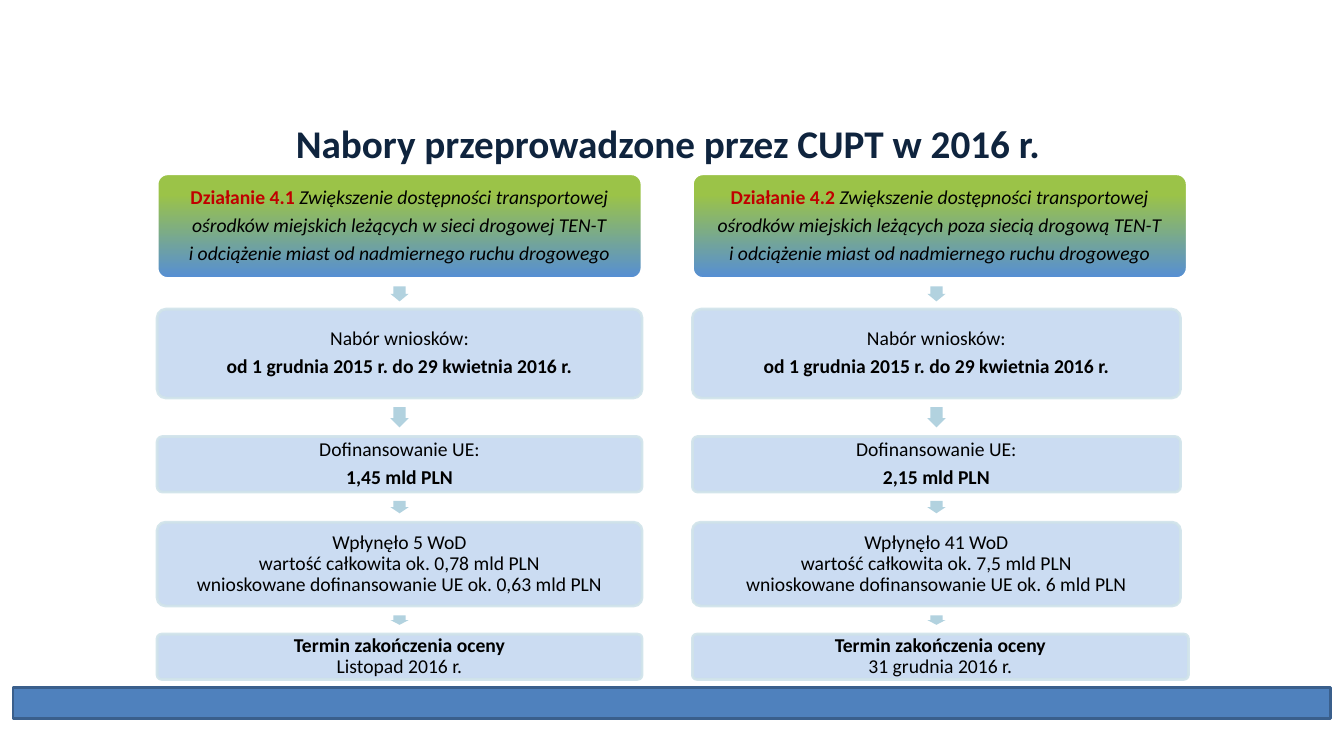
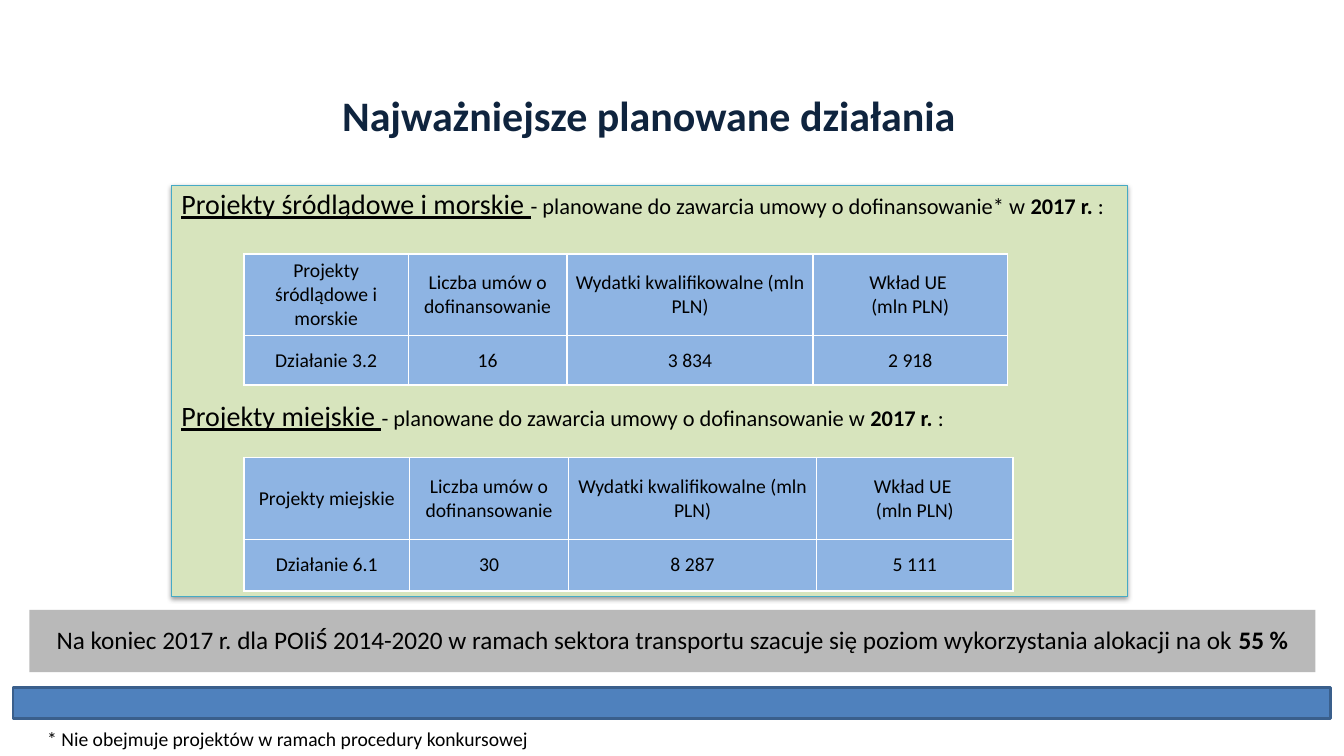
from lxml import etree
from pptx import Presentation
from pptx.dml.color import RGBColor
from pptx.enum.shapes import MSO_SHAPE
from pptx.enum.text import MSO_ANCHOR, PP_ALIGN
from pptx.oxml import parse_xml
from pptx.oxml.ns import nsdecls, qn
from pptx.util import Cm, Pt

RECTANGLE, ROUNDED = MSO_SHAPE.RECTANGLE, MSO_SHAPE.ROUNDED_RECTANGLE
PROCESS, DOWN_ARROW = MSO_SHAPE.FLOWCHART_PROCESS, MSO_SHAPE.DOWN_ARROW
TOP, MIDDLE = MSO_ANCHOR.TOP, MSO_ANCHOR.MIDDLE
LEFT, CENTER = PP_ALIGN.LEFT, PP_ALIGN.CENTER

FONT = "Calibri"
BLACK = RGBColor(0x00, 0x00, 0x00)
WHITE = RGBColor(0xFF, 0xFF, 0xFF)
NAVY = RGBColor(0x0F, 0x24, 0x3E)
RED = RGBColor(0xC0, 0x00, 0x00)
BAND = RGBColor(0x4F, 0x81, 0xBD)
BAND_EDGE = RGBColor(0x3A, 0x5F, 0x8C)
HEADER_BLUE = RGBColor(0x55, 0x8E, 0xD5)
HEADER_GREEN = RGBColor(0x9B, 0xC3, 0x48)
CARD = RGBColor(0xC6, 0xD9, 0xF1)
CARD_EDGE = RGBColor(0xD0, 0xE3, 0xEA)
ARROW = RGBColor(0xB2, 0xD2, 0xDF)
PANEL = RGBColor(0xD7, 0xE4, 0xBD)
PANEL_EDGE = RGBColor(0x46, 0xAA, 0xC5)
CELL = RGBColor(0x8E, 0xB4, 0xE3)
GREY = RGBColor(0xA6, 0xA6, 0xA6)


def add_box(page, kind, place, fill, edge=None, edge_width=2, opacity=100):
    """Add a shadowless shape; place is left, top, width, height in cm."""
    box = page.shapes.add_shape(kind, *[Cm(length) for length in place])
    box.shadow.inherit = False
    box.fill.solid()
    box.fill.fore_color.rgb = fill
    if edge is None:
        box.line.fill.background()
    else:
        box.line.color.rgb = edge
        box.line.width = Pt(edge_width)
    if opacity < 100:
        for color in box._element.spPr.iter(qn("a:srgbClr")):
            etree.SubElement(color, qn("a:alpha")).set("val", str(opacity * 1000))
    return box


def write(frame, lines, size=14, align=CENTER, color=BLACK, spacing=1.0, after=0):
    """Each line is a list of (text, font settings) pairs."""
    frame.word_wrap = True
    for number, line in enumerate(lines):
        para = frame.add_paragraph() if number else frame.paragraphs[0]
        para.alignment = align
        para.line_spacing = spacing
        para.space_after = Pt(after)
        for text, settings in line:
            span = para.add_run()
            span.text = text
            font = span.font
            font.name = FONT
            font.size = Pt(settings.get("size", size))
            font.bold = settings.get("bold", False)
            font.italic = settings.get("italic", False)
            font.underline = settings.get("underline", False)
            font.color.rgb = settings.get("color", color)


PLAIN, BOLD, ITALIC = {}, {"bold": True}, {"italic": True}

deck = Presentation()
deck.slide_width, deck.slide_height = Cm(33.87), Cm(19.05)

# Title and bottom band of both slides
pages = []
for title_text, size, place in [
    ("Nabory przeprowadzone przez CUPT w 2016 r. ", 28, (5.51, 2.87, 22.86, 1.73)),
    ("Najważniejsze planowane działania", 30, (4.93, 2.13, 22.86, 2.31)),
]:
    page = deck.slides.add_slide(deck.slide_layouts[5])
    title = page.shapes.title
    title.left, title.top, title.width, title.height = [Cm(length) for length in place]
    title.text_frame.vertical_anchor = TOP
    write(title.text_frame, [[(title_text, BOLD)]], size, color=NAVY)
    add_box(page, PROCESS, (0.33, 17.32, 33.2, 0.79), BAND, BAND_EDGE)
    pages.append(page)
calls_page, plans_page = pages

# Slide 1: two columns of steps; rows are top, height, space after
rows = [(4.38, 2.64, 5), (7.79, 2.24, 5), (11, 1.4, 5), (13.16, 2.11, 0), (15.98, 1.14, 0)]
arrow_heights = [0.38, 0.51, 0.31, 0.24]
arrow_width = 0.46
columns = [
    (3.96, [12.22] * 5, "4.1", "leżących w sieci drogowej TEN-T",
     "1,45", "5", "0,78", "0,63", "Listopad 2016 r."),
    (17.45, [12.47, 12.3, 12.3, 12.3, 12.5], "4.2", "leżących poza siecią drogową TEN-T",
     "2,15", "41", "7,5", "6", "31 grudnia 2016 r."),
]
for left, widths, measure, place_text, funding, count, total, requested, deadline in columns:
    steps = [
        [[(f"Działanie {measure} ", {"bold": True, "color": RED}),
          ("Zwiększenie dostępności transportowej", ITALIC)],
         [(f"ośrodków miejskich {place_text}", ITALIC)],
         [("i odciążenie miast od nadmiernego ruchu drogowego", ITALIC)]],
        [[("Nabór wniosków:", PLAIN)],
         [("od 1 grudnia 2015 r. do 29 kwietnia 2016 r.", BOLD)]],
        [[("Dofinansowanie UE:", PLAIN)],
         [(f"{funding} mld PLN", BOLD)]],
        [[(f"Wpłynęło {count} WoD", PLAIN)],
         [(f"wartość całkowita ok. {total} mld PLN", PLAIN)],
         [(f"wnioskowane dofinansowanie UE ok. {requested} mld PLN", PLAIN)]],
        [[("Termin zakończenia oceny", BOLD)],
         [(deadline, PLAIN)]],
    ]
    for number, (lines, width, (top, height, after)) in enumerate(zip(steps, widths, rows)):
        place = (left, top, width, height)
        if number == 0:
            box = add_box(calls_page, ROUNDED, place, HEADER_GREEN, WHITE)
            box.fill.gradient()
            box.fill.gradient_angle = 90
            bottom_stop, top_stop = box.fill.gradient_stops
            bottom_stop.color.rgb, bottom_stop.position = HEADER_BLUE, 0
            top_stop.color.rgb, top_stop.position = HEADER_GREEN, 0.8
        else:
            box = add_box(calls_page, ROUNDED, place, CARD, CARD_EDGE, opacity=90)
            # Arrow centred in the gap above the card
            previous_top, previous_height, _ = rows[number - 1]
            middle = (previous_top + previous_height + top) / 2
            arrow_height = arrow_heights[number - 1]
            arrow = add_box(calls_page, DOWN_ARROW, (
                left + (widths[1] - arrow_width) / 2, middle - arrow_height / 2,
                arrow_width, arrow_height), ARROW)
            arrow.adjustments[0] = 0.67
        box.adjustments[0] = 0.1
        frame = box.text_frame
        frame.margin_left = frame.margin_right = Cm(0.1)
        frame.margin_top = frame.margin_bottom = Cm(0.05)
        frame.vertical_anchor = MIDDLE
        write(frame, lines, spacing=0.9, after=after)

# Slide 2: green panel with two headings
panel = add_box(plans_page, RECTANGLE, (4.32, 4.67, 24.1, 10.36), PANEL, PANEL_EDGE, 0.75)
panel._element.spPr.find(qn("a:effectLst")).append(parse_xml(
    f'<a:outerShdw {nsdecls("a")} blurRad="40000" dist="20000" dir="5400000" rotWithShape="0">'
    '<a:srgbClr val="000000"><a:alpha val="38000"/></a:srgbClr></a:outerShdw>'))
panel.text_frame.vertical_anchor = TOP
heading = {"size": 20, "underline": True}
write(panel.text_frame, [
    [("Projekty śródlądowe i morskie ", heading),
     ("- planowane do zawarcia umowy o dofinansowanie* w ", PLAIN), ("2017 r. ", BOLD), (":", PLAIN)],
    [("Projekty miejskie ", heading),
     ("- planowane do zawarcia umowy o dofinansowanie w ", PLAIN), ("2017 r. ", BOLD), (":", PLAIN)],
], 16, LEFT, spacing=0.9)
panel.text_frame.paragraphs[1].space_before = Pt(130)

# Tables of planned agreements
shared_headers = ["Liczba umów o dofinansowanie", "Wydatki kwalifikowalne (mln PLN)", "Wkład UE \n(mln PLN)"]
for top, widths, heights, name, values in [
    (6.4, [4.14, 4.0, 6.2, 4.9], [2.06, 1.24], "Projekty śródlądowe i morskie",
     ["Działanie 3.2", "16", "3 834", "2 918"]),
    (11.53, [4.17, 4.01, 6.25, 4.95], [2.06, 1.3], "Projekty miejskie",
     ["Działanie 6.1", "30", "8 287", "5 111"]),
]:
    table = plans_page.shapes.add_table(
        2, 4, Cm(6.15), Cm(top), Cm(sum(widths)), Cm(sum(heights))).table
    table.first_row = table.horz_banding = False
    for column, width in zip(table.columns, widths):
        column.width = Cm(width)
    for row, height, texts in zip(table.rows, heights, [[name] + shared_headers, values]):
        row.height = Cm(height)
        for cell, text in zip(row.cells, texts):
            cell.fill.solid()
            cell.fill.fore_color.rgb = CELL
            cell.vertical_anchor = MIDDLE
            cell.margin_left = cell.margin_right = Cm(0.18)
            cell.margin_top = cell.margin_bottom = 0
            write(cell.text_frame, [[(line, PLAIN)] for line in text.split("\n")])
            for position, side in enumerate("LRTB"):
                cell._tc.get_or_add_tcPr().insert(position, parse_xml(
                    f'<a:ln{side} {nsdecls("a")} w="12700"><a:solidFill>'
                    f'<a:srgbClr val="{WHITE}"/></a:solidFill></a:ln{side}>'))

# Footnote and summary bar
footnote = plans_page.shapes.add_textbox(Cm(0.94), Cm(18.19), Cm(19.61), Cm(0.86))
write(footnote.text_frame,
      [[("* Nie obejmuje projektów w ramach procedury konkursowej", PLAIN)]], align=LEFT)
summary = add_box(plans_page, RECTANGLE, (0.74, 15.37, 32.41, 1.57), GREY, opacity=78)
summary.text_frame.vertical_anchor = MIDDLE
write(summary.text_frame, [[
    ("Na koniec 2017 r. dla POIiŚ 2014-2020 w ramach sektora transportu "
     "szacuje się poziom wykorzystania alokacji na ok ", PLAIN),
    ("55 %", BOLD)]], 18, spacing=0.9)

deck.save("out.pptx")
